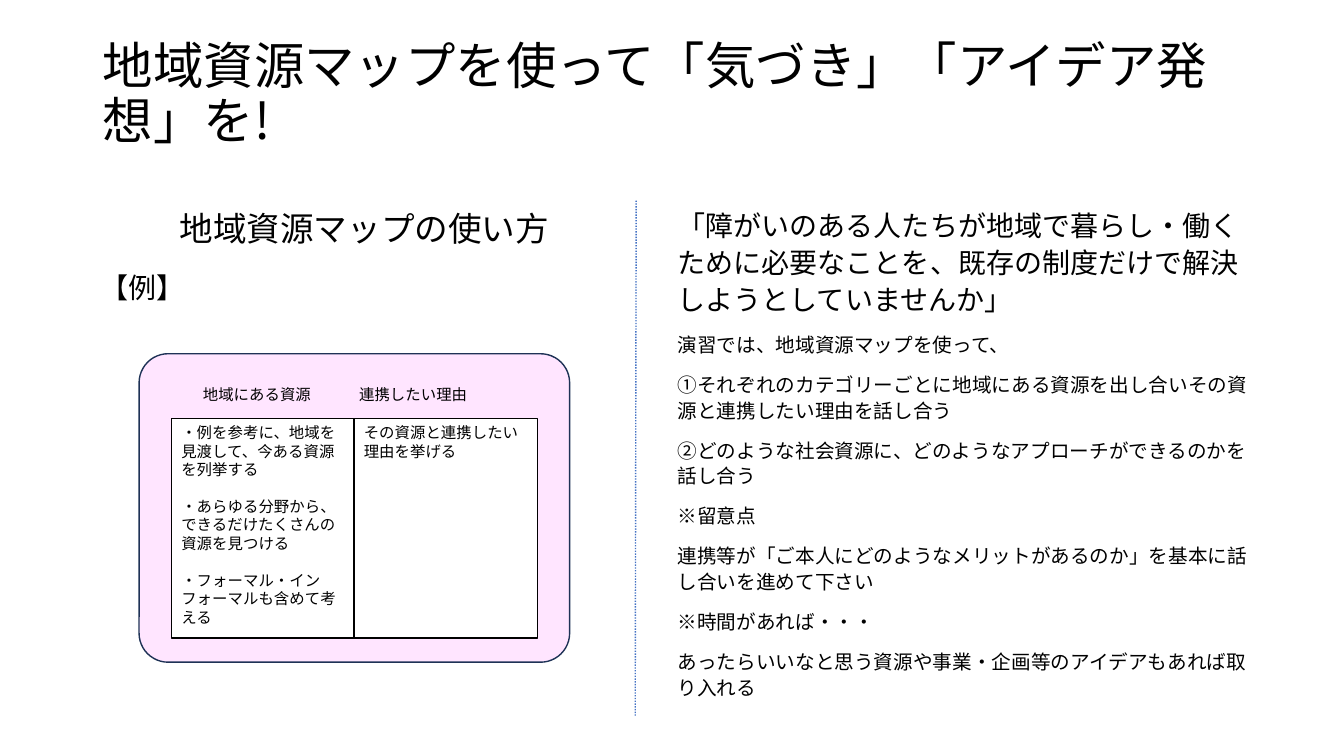
from pptx import Presentation
from pptx.dml.color import RGBColor
from pptx.enum.dml import MSO_LINE
from pptx.enum.shapes import MSO_CONNECTOR, MSO_SHAPE
from pptx.enum.text import MSO_ANCHOR, MSO_AUTO_SIZE, PP_ALIGN
from pptx.oxml.ns import qn
from pptx.util import Inches, Pt
from lxml.etree import SubElement

FONT = "Noto Sans CJK JP"
BLACK = "000000"
TITLE = "地域資源マップを使って「気づき」「アイデア発想」を!"
QUESTION = "「障がいのある人たちが地域で暮らし・働くために必要なことを、既存の制度だけで解決しようとしていませんか」"
STEPS = [
    "演習では、地域資源マップを使って、",
    "①それぞれのカテゴリーごとに地域にある資源を出し合いその資源と連携したい理由を話し合う",
    "②どのような社会資源に、どのようなアプローチができるのかを話し合う",
    "※留意点",
    "連携等が「ご本人にどのようなメリットがあるのか」を基本に話し合いを進めて下さい",
    "※時間があれば・・・",
    "あったらいいなと思う資源や事業・企画等のアイデアもあれば取り入れる",
]
CELLS = [
    ["・例を参考に、地域を見渡して、今ある資源を列挙する",
     "・あらゆる分野から、できるだけたくさんの資源を見つける",
     "・フォーマル・インフォーマルも含めて考える"],
    ["その資源と連携したい理由を挙げる"],
]


def color(code):
    return RGBColor.from_string(code)


def write(frame, text, size=11, spacing=1.0, before=0, indent=0, tab=None):
    """Fill the empty first paragraph, or add one, with formatted text."""
    para = frame.paragraphs[0]
    if para.runs:
        para = frame.add_paragraph()
    para.alignment = PP_ALIGN.LEFT
    para.line_spacing = spacing
    para.space_before = Pt(before)
    props = para._p.get_or_add_pPr()
    props.set("marL", "0")
    props.set("indent", str(Inches(indent)))
    SubElement(props, qn("a:buNone"))
    if tab:
        stops = SubElement(props, qn("a:tabLst"))
        SubElement(stops, qn("a:tab"), pos=str(Inches(tab)), algn="l")
    run = para.add_run()
    run.text = text
    run.font.size = Pt(size)
    run.font.name = FONT
    run.font.color.rgb = color(BLACK)
    SubElement(run._r.get_or_add_rPr(), qn("a:ea"), typeface=FONT)


def setup(frame, anchor=MSO_ANCHOR.TOP, inset=0.05):
    frame.word_wrap = True
    frame.auto_size = MSO_AUTO_SIZE.NONE
    frame.vertical_anchor = anchor
    frame.margin_top = Inches(inset)
    return frame


def place(holder, left, top, width, height, **format):
    """Move a placeholder and return its text frame."""
    holder.left, holder.top = Inches(left), Inches(top)
    holder.width, holder.height = Inches(width), Inches(height)
    return setup(holder.text_frame, **format)


def panel(slide, kind, box, fill, line, inset=0.05):
    shape = slide.shapes.add_shape(kind, *map(Inches, box))
    shape.shadow.inherit = False
    shape.fill.solid()
    shape.fill.fore_color.rgb = color(fill)
    shape.line.color.rgb = color(line)
    shape.line.width = Pt(1)
    setup(shape.text_frame, inset=inset)
    return shape


def divide(slide, start, end):
    """Draw the dotted line between the columns."""
    line = slide.shapes.add_connector(
        MSO_CONNECTOR.STRAIGHT, *map(Inches, start + end))
    line.line.color.rgb = color("4472C4")
    line.line.width = Pt(1)
    line.line.dash_style = MSO_LINE.ROUND_DOT
    SubElement(line._element.spPr, qn("a:effectLst"))


def main():
    deck = Presentation()
    deck.slide_width, deck.slide_height = Inches(13.33), Inches(7.5)
    slide = deck.slides.add_slide(deck.slide_layouts[3])
    title, usage, guide = slide.placeholders

    frame = place(title, 0.92, 0.4, 11.5, 1.1, anchor=MSO_ANCHOR.MIDDLE)
    write(frame, TITLE, size=36, spacing=0.9)

    frame = place(usage, 0.9, 2.04, 5.07, 4.76, inset=0.1)
    write(frame, "地域資源マップの使い方", size=24, spacing=0.8, before=10, indent=0.78)
    write(frame, "【例】", size=20, spacing=0.8, before=21)

    frame = place(guide, 6.62, 1.99, 5.98, 5.11)
    write(frame, QUESTION, size=20, spacing=1.1, before=10)
    for step in STEPS:
        write(frame, step, size=14, spacing=1.1, before=10)

    card = panel(slide, MSO_SHAPE.ROUNDED_RECTANGLE, (1.38, 3.51, 4.27, 3.06),
                 "FFE5FF", "1E3256", inset=0.23)
    card.adjustments[0] = 0.094
    write(card.text_frame, "地域にある資源\t連携したい理由", indent=0.45, tab=2.18)

    for col, notes in enumerate(CELLS):
        cell = panel(slide, MSO_SHAPE.RECTANGLE,
                     (1.7 + col * 1.81, 4.15, 1.82, 2.18), "FFFFFF", BLACK)
        for row, note in enumerate(notes):
            write(cell.text_frame, note, before=13 if row else 0)

    divide(slide, (6.31, 1.99), (6.3, 7.1))
    deck.save("out.pptx")


if __name__ == "__main__":
    main()
